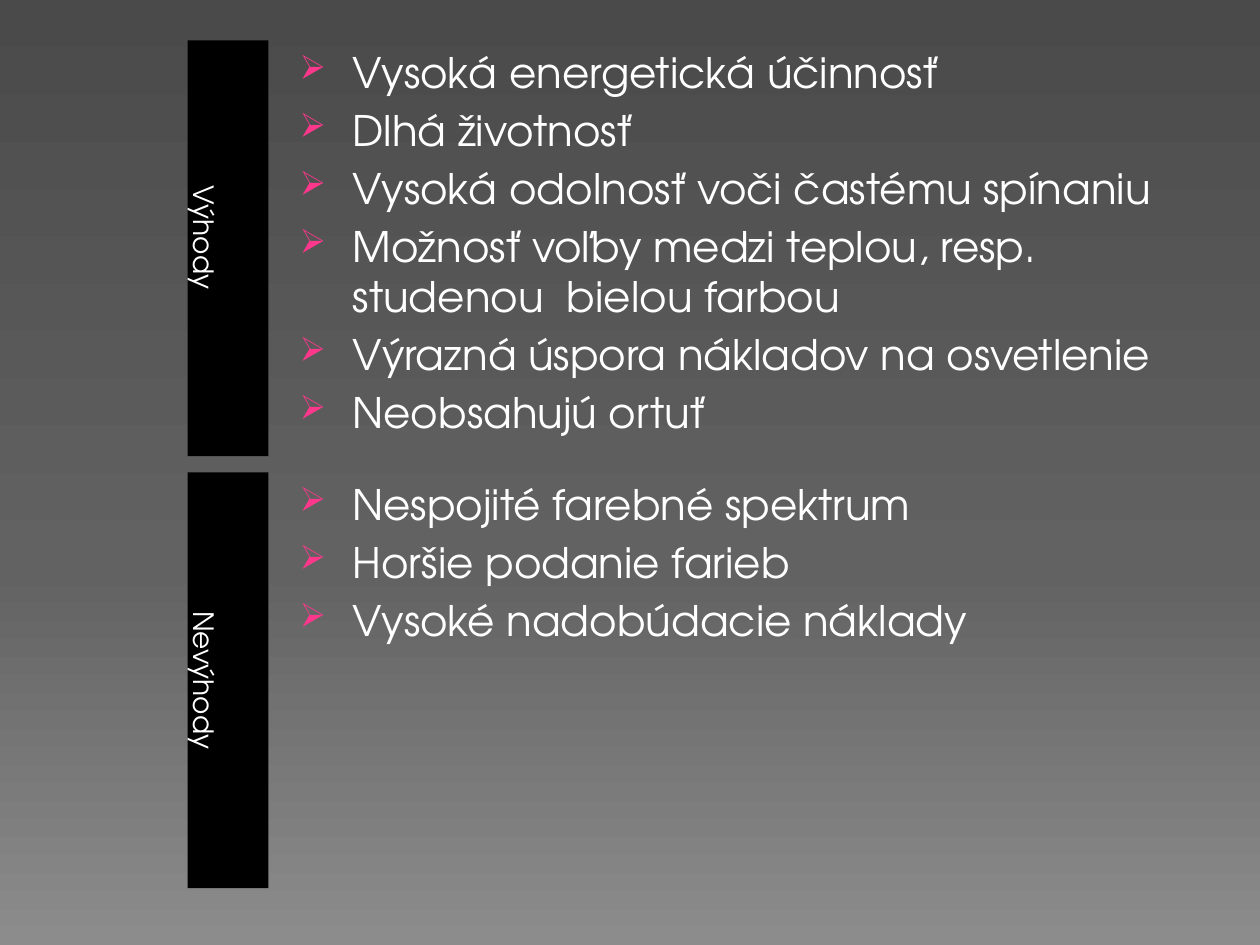
from copy import deepcopy

from lxml import etree
from pptx import Presentation
from pptx.dml.color import RGBColor
from pptx.enum.shapes import MSO_SHAPE
from pptx.enum.text import MSO_ANCHOR, PP_ALIGN
from pptx.oxml.ns import qn
from pptx.util import Inches, Pt

RECT = MSO_SHAPE.RECTANGLE
BOTTOM = MSO_ANCHOR.BOTTOM
CENTER = PP_ALIGN.CENTER
FONT = "TeX Gyre Adventor"
COLORS = {"text": "FFFFFF", "bar": "000000", "bullet": "FF388C"}
BACK = [(0, "4A4A4A"), (0.6, "626262"), (1, "8C8C8C")]
TOP, STEP, HEIGHT = 0.32, 3.43, 3.3
GROUPS = [
    ("Výhody\t", [
        "Vysoká energetická účinnosť",
        "Dlhá životnosť",
        "Vysoká odolnosť voči častému spínaniu",
        "Možnosť voľby medzi teplou, resp. studenou  bielou farbou",
        "Výrazná úspora nákladov na osvetlenie",
        "Neobsahujú ortuť",
    ]),
    ("Nevýhody", [
        "Nespojité farebné spektrum",
        "Horšie podanie farieb",
        "Vysoké nadobúdacie náklady",
    ]),
]


def rgb(name):
    return RGBColor.from_string(COLORS[name])


def paint_back(slide):
    fill = slide.background.fill
    fill.gradient()
    fill.gradient_angle = 270  # counter-clockwise, so dark is on top
    stops = slide.element.find(".//" + qn("a:gsLst"))
    stops.append(deepcopy(stops[-1]))
    for stop, (place, color) in zip(fill.gradient_stops, BACK):
        stop.position = place
        stop.color.rgb = RGBColor.from_string(color)


def set_font(para, size):
    para.font.name = FONT
    para.font.size = Pt(size)
    para.font.color.rgb = rgb("text")


def add_bullet(para):
    props = para._p.get_or_add_pPr()
    props.set("marL", str(Inches(0.49)))
    props.set("indent", str(Inches(-0.42)))
    color = etree.SubElement(props, qn("a:buClr"))
    etree.SubElement(color, qn("a:srgbClr"), val=COLORS["bullet"])
    etree.SubElement(props, qn("a:buSzPct"), val="80000")
    etree.SubElement(props, qn("a:buChar"), char="➢")


def add_bar(slide, top, label):
    """Add a black bar whose label reads downwards along its left edge."""
    bar = slide.shapes.add_shape(
        RECT, Inches(1.49), Inches(top), Inches(0.64), Inches(HEIGHT))
    bar.shadow.inherit = False
    bar.fill.solid()
    bar.fill.fore_color.rgb = rgb("bar")
    bar.line.fill.background()
    frame = bar.text_frame
    frame.margin_left = frame.margin_right = 0
    frame.margin_top = frame.margin_bottom = 0
    frame.vertical_anchor = BOTTOM
    frame._txBody.bodyPr.set("vert", "vert")
    para = frame.paragraphs[0]
    para.text = label
    para.alignment = CENTER
    set_font(para, 16)


def add_list(slide, top, items):
    box = slide.shapes.add_textbox(
        Inches(2.21), Inches(top), Inches(7.5), Inches(HEIGHT))
    frame = box.text_frame
    frame.word_wrap = True
    for i, item in enumerate(items):
        para = frame.add_paragraph() if i else frame.paragraphs[0]
        para.text = item
        para.space_before = Pt(4.3)
        set_font(para, 24)
        add_bullet(para)


def main():
    deck = Presentation()
    deck.slide_width, deck.slide_height = Inches(10), Inches(7.5)
    slide = deck.slides.add_slide(deck.slide_layouts[6])
    paint_back(slide)
    for i, (label, items) in enumerate(GROUPS):
        top = TOP + i * STEP
        add_bar(slide, top, label)
        add_list(slide, top, items)
    deck.save("out.pptx")


if __name__ == "__main__":
    main()
